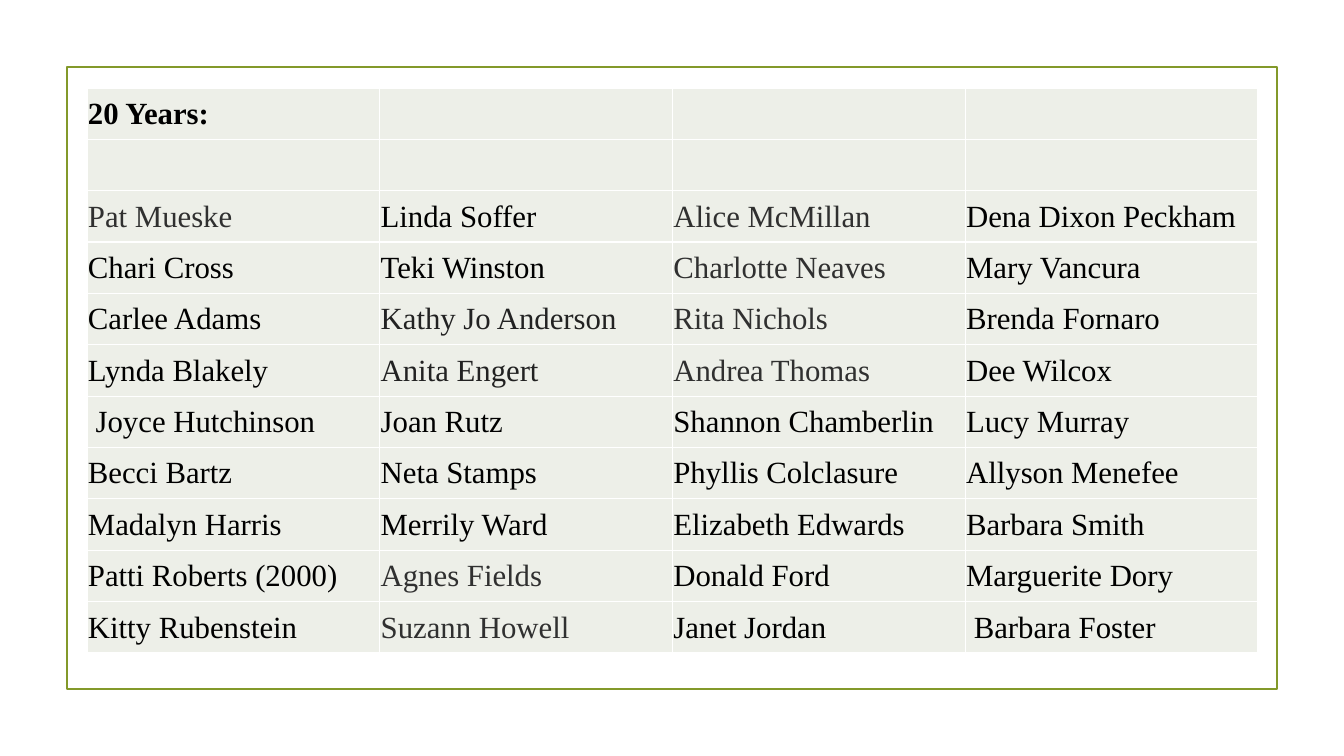
from dataclasses import dataclass

from lxml.etree import fromstring
from pptx import Presentation
from pptx.dml.color import RGBColor as Rgb
from pptx.enum.shapes import MSO_SHAPE as Shape
from pptx.enum.text import MSO_ANCHOR as Anchor
from pptx.oxml.ns import nsdecls
from pptx.util import Emu, Pt

SCALE = 914400 / 100.8


@dataclass(frozen=True)
class Theme:
    font: str = "Times New Roman"
    size: int = 22
    frame: str = "83992A"
    cell: str = "EDEFE8"
    rule: str = "FFFFFF"
    ink: str = "000000"
    soft: str = "303030"
    dark: str = "222222"


THEME = Theme()
TITLE = "20 Years:"
NAMES = [
    ("Pat Mueske", "Linda Soffer", "Alice McMillan", "Dena Dixon Peckham"),
    ("Chari Cross", "Teki Winston", "Charlotte Neaves", "Mary Vancura"),
    ("Carlee Adams", "Kathy Jo Anderson", "Rita Nichols", "Brenda Fornaro"),
    ("Lynda Blakely", "Anita Engert", "Andrea Thomas", "Dee Wilcox"),
    (" Joyce Hutchinson", "Joan Rutz", "Shannon Chamberlin", "Lucy Murray"),
    ("Becci Bartz", "Neta Stamps", "Phyllis Colclasure", "Allyson Menefee"),
    ("Madalyn Harris", "Merrily Ward", "Elizabeth Edwards", "Barbara Smith"),
    ("Patti Roberts (2000)", "Agnes Fields", "Donald Ford", "Marguerite Dory"),
    ("Kitty Rubenstein", "Suzann Howell", "Janet Jordan", " Barbara Foster"),
]
ROWS = [(TITLE, "", "", ""), ("", "", "", ""), *NAMES]
TINTS = {
    **dict.fromkeys(("Kathy Jo Anderson", "Anita Engert"), THEME.dark),
    **dict.fromkeys(("Pat Mueske", "Alice McMillan", "Charlotte Neaves",
                     "Rita Nichols", "Andrea Thomas", "Agnes Fields",
                     "Suzann Howell"), THEME.soft),
}


def px(count):
    return Emu(round(count * SCALE))


def add_frame(slide, *box):
    frame = slide.shapes.add_shape(Shape.RECTANGLE, *map(px, box))
    frame.shadow.inherit = False
    frame.fill.background()
    frame.line.color.rgb = Rgb.from_string(THEME.frame)
    frame.line.width = Pt(1.25)


def add_rules(cell):
    """Draw a thin line on all four sides of the cell."""
    props = cell._tc.get_or_add_tcPr()
    for place, side in enumerate("LRTB"):
        props.insert(place, fromstring(
            f'<a:ln{side} {nsdecls("a")} w="{Pt(1)}"><a:solidFill>'
            f'<a:srgbClr val="{THEME.rule}"/></a:solidFill></a:ln{side}>'))


def fill_cell(cell, text):
    cell.fill.solid()
    cell.fill.fore_color.rgb = Rgb.from_string(THEME.cell)
    add_rules(cell)
    cell.vertical_anchor = Anchor.MIDDLE
    cell.margin_left = cell.margin_right = cell.margin_top = px(1)
    cell.margin_bottom = 0
    cell.text = text
    font = cell.text_frame.paragraphs[0].font
    font.name = THEME.font
    font.size = Pt(THEME.size)
    font.bold = text == TITLE
    font.color.rgb = Rgb.from_string(TINTS.get(text, THEME.ink))


def add_names(slide, left, top, width, height):
    count = len(ROWS), len(ROWS[0])
    box = map(px, (left, top, width, height))
    table = slide.shapes.add_table(*count, *box).table
    table.first_row = table.horz_banding = False
    for row in table.rows:
        row.height = px(height) // count[0]
    for y, row in enumerate(ROWS):
        for x, text in enumerate(row):
            fill_cell(table.cell(y, x), text)


def main():
    deck = Presentation()
    deck.slide_width, deck.slide_height = px(1344), px(756)
    slide = deck.slides.add_slide(deck.slide_layouts[6])
    add_frame(slide, 67, 67, 1210, 622)
    add_names(slide, 87, 88, 1171, 565)
    deck.save("out.pptx")


if __name__ == "__main__":
    main()
